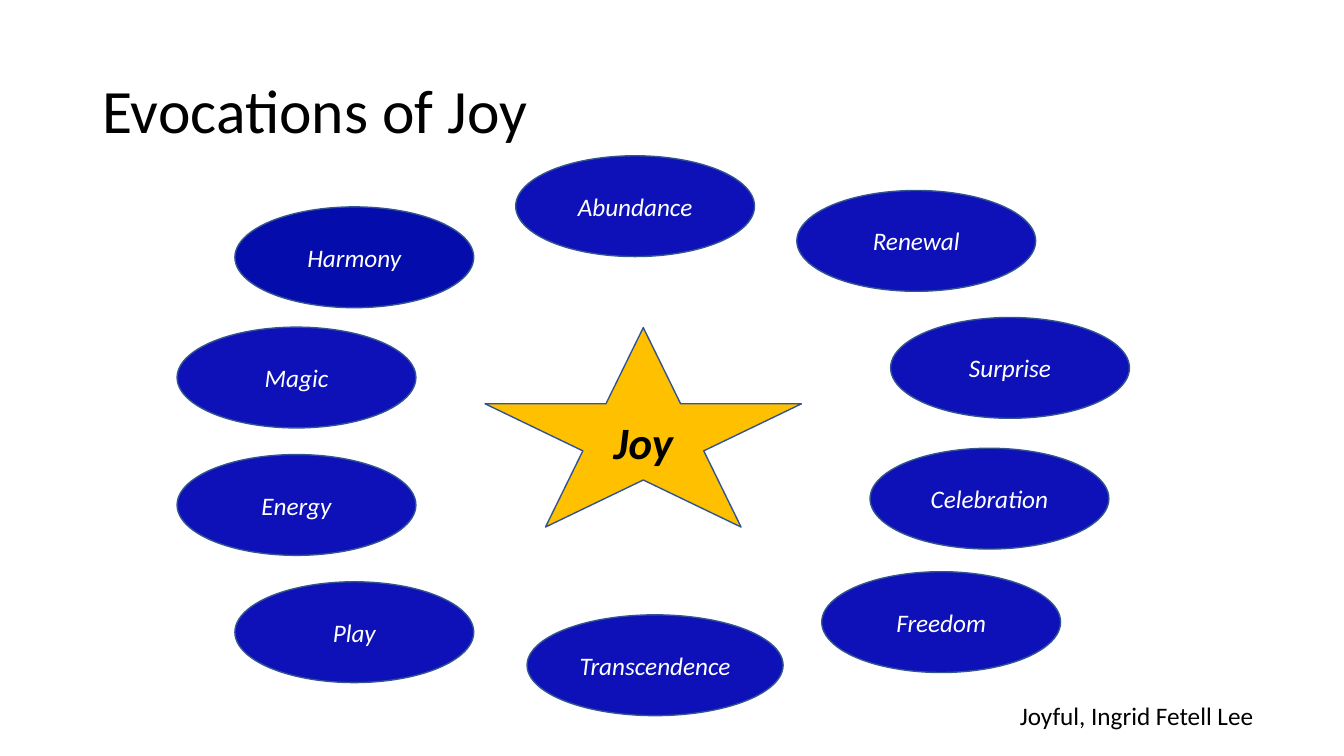
"""Build the "Evocations of Joy" slide: a star ringed by ten ellipses."""
from pptx import Presentation
from pptx.dml.color import RGBColor
from pptx.enum.shapes import MSO_SHAPE
from pptx.enum.text import MSO_ANCHOR, PP_ALIGN
from pptx.util import Pt

BLACK = RGBColor(0x00, 0x00, 0x00)
WHITE = RGBColor(0xFF, 0xFF, 0xFF)
GOLD = RGBColor(0xFF, 0xC0, 0x00)
BLUE = RGBColor(0x0D, 0x11, 0xB7)
DEEP_BLUE = RGBColor(0x04, 0x0C, 0xAC)
OUTLINE = RGBColor(0x32, 0x54, 0x91)


def write(shape, text, size, color, bold=False, italic=False):
    shape.text_frame.vertical_anchor = MSO_ANCHOR.MIDDLE
    paragraph = shape.text_frame.paragraphs[0]
    paragraph.text = text
    font = paragraph.font
    font.name, font.size, font.bold, font.italic = "Calibri", Pt(size), bold, italic
    font.color.rgb = color
    return paragraph


def add_figure(kind, left, top, width, height, fill):
    figure = slide.shapes.add_shape(kind, Pt(left), Pt(top), Pt(width), Pt(height))
    figure.shadow.inherit = False
    figure.fill.solid()
    figure.fill.fore_color.rgb = fill
    figure.line.color.rgb = OUTLINE
    figure.line.width = Pt(1)
    return figure


presentation = Presentation()
presentation.slide_width, presentation.slide_height = Pt(960), Pt(540)
slide = presentation.slides.add_slide(presentation.slide_layouts[6])

title = slide.shapes.add_textbox(Pt(66), Pt(28.8), Pt(828), Pt(104.4))
title.text_frame.word_wrap = True
write(title, "Evocations of Joy", 44, BLACK).line_spacing = 0.9

star = add_figure(MSO_SHAPE.STAR_5_POINT, 346.5, 234, 226, 142.5, GOLD)
write(star, "Joy", 32, BLACK, bold=True, italic=True).alignment = PP_ALIGN.CENTER

evocations = [
    ("Celebration", 621.5, 320.2, 170.6, BLUE),
    ("Surprise", 636.2, 226.8, 170.6, BLUE),
    ("Harmony", 167.8, 147.8, 170.6, DEEP_BLUE),
    ("Magic", 126.5, 233.7, 170.6, BLUE),
    ("Energy", 126.5, 324.7, 170.6, BLUE),
    ("Transcendence", 376.5, 439.2, 182.9, BLUE),
    ("Abundance", 368.4, 111.3, 170.6, BLUE),
    ("Renewal", 569.2, 136.1, 170.6, BLUE),
    ("Play", 167.8, 415.6, 170.6, BLUE),
    ("Freedom", 587, 408.4, 170.6, BLUE),
]
for evocation, left, top, width, fill in evocations:
    ellipse = add_figure(MSO_SHAPE.OVAL, left, top, width, 72, fill)
    write(ellipse, evocation, 18, WHITE, italic=True).alignment = PP_ALIGN.CENTER

source = slide.shapes.add_textbox(Pt(721.4), Pt(496.8), Pt(183.6), Pt(29))
source.text_frame.word_wrap = False
write(source, "Joyful, Ingrid Fetell Lee", 18, BLACK)

presentation.save("out.pptx")
